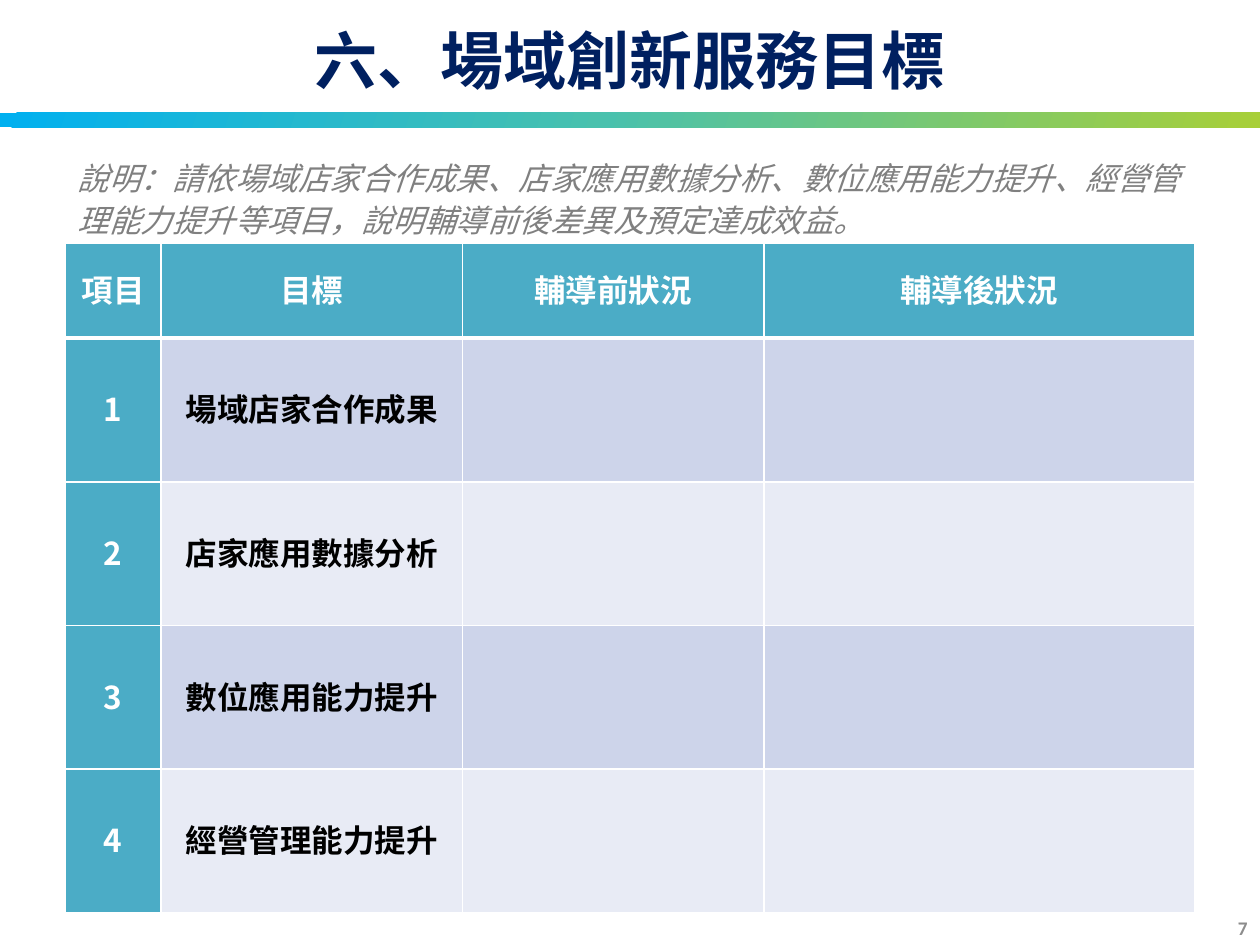
from lxml import etree
from pptx import Presentation
from pptx.dml.color import RGBColor
from pptx.enum.shapes import MSO_SHAPE
from pptx.enum.text import MSO_ANCHOR, PP_ALIGN
from pptx.oxml import parse_xml
from pptx.oxml.ns import nsdecls, qn
from pptx.util import Pt

RECTANGLE = MSO_SHAPE.RECTANGLE
TOP, MIDDLE = MSO_ANCHOR.TOP, MSO_ANCHOR.MIDDLE
LEFT, CENTER, RIGHT = PP_ALIGN.LEFT, PP_ALIGN.CENTER, PP_ALIGN.RIGHT

COLORS = {
    "navy": "002060",
    "gray": "808080",
    "page_number": "8C8C8C",
    "teal": "4BACC6",
    "band_dark": "CDD4EA",
    "band_light": "E8EBF5",
    "white": "FFFFFF",
    "black": "000000",
    "sky": "00B0F0",
    "mint": "49C1AD",
    "lime": "A8CF38",
}
CJK_FONT = "Noto Sans CJK SC"
HEADERS = ["項目", "目標", "輔導前狀況", "輔導後狀況"]
GOALS = ["場域店家合作成果", "店家應用數據分析", "數位應用能力提升", "經營管理能力提升"]


class SlideBuilder:
    def __init__(self, page):
        self.page = page

    def style(self, para, size, color, align, bold=False, italic=False,
              font=CJK_FONT, spacing=None):
        para.alignment = align
        if spacing:
            para.line_spacing = Pt(spacing)
        for span in para.runs:
            span.font.size = Pt(size)
            span.font.bold = bold
            span.font.italic = italic
            span.font.name = font
            span.font.color.rgb = RGBColor.from_string(COLORS[color])
            east_asian = etree.SubElement(span.font._element, qn("a:ea"))
            east_asian.set("typeface", font)

    def text(self, content, left, top, width, height, anchor, **style):
        box = self.page.shapes.add_textbox(Pt(left), Pt(top), Pt(width), Pt(height))
        frame = box.text_frame
        frame.word_wrap = True
        frame.vertical_anchor = anchor
        frame.text = content
        self.style(frame.paragraphs[0], **style)

    def gradient_bar(self, left, top, width, height, stops, angle):
        bar = self.page.shapes.add_shape(
            RECTANGLE, Pt(left), Pt(top), Pt(width), Pt(height))
        bar.shadow.inherit = False
        bar.line.fill.background()
        bar.fill.gradient()
        gradient = bar._element.spPr.find(qn("a:gradFill"))
        stop_xml = "".join(
            f'<a:gs pos="{position * 1000}"><a:srgbClr val="{COLORS[color]}"/></a:gs>'
            for position, color in stops)
        bar._element.spPr.replace(gradient, parse_xml(
            f'<a:gradFill {nsdecls("a")} rotWithShape="1"><a:gsLst>{stop_xml}</a:gsLst>'
            f'<a:lin ang="{angle * 60000}" scaled="0"/></a:gradFill>'))

    def table(self, left, top, widths, heights):
        frame = self.page.shapes.add_table(
            len(heights), len(widths), Pt(left), Pt(top),
            Pt(sum(widths)), Pt(sum(heights)))
        table = frame.table
        table.first_row = False
        table.horz_banding = False
        for column, width in zip(table.columns, widths):
            column.width = Pt(width)
        for row, height in zip(table.rows, heights):
            row.height = Pt(height)
        return table

    def cell(self, cell, content, fill, color, top_line, bottom_line):
        cell.margin_left = cell.margin_right = Pt(5)
        cell.margin_top = cell.margin_bottom = Pt(0)
        cell.vertical_anchor = MIDDLE
        cell.text = content
        self.style(cell.text_frame.paragraphs[0], size=18, color=color,
                   align=CENTER, bold=True, spacing=24)
        properties = cell._tc.get_or_add_tcPr()
        for side, width in (("L", 1), ("R", 1), ("T", top_line), ("B", bottom_line)):
            properties.append(parse_xml(
                f'<a:ln{side} {nsdecls("a")} w="{Pt(width)}"><a:solidFill>'
                f'<a:srgbClr val="{COLORS["white"]}"/></a:solidFill></a:ln{side}>'))
        cell.fill.solid()
        cell.fill.fore_color.rgb = RGBColor.from_string(COLORS[fill])


def main():
    deck = Presentation()
    deck.slide_width, deck.slide_height = Pt(720), Pt(540)
    builder = SlideBuilder(deck.slides.add_slide(deck.slide_layouts[6]))

    builder.gradient_bar(0, 64.5, 720, 8.2,
                         [(0, "sky"), (48, "mint"), (100, "lime")], 18)
    builder.text("六、場域創新服務目標", 0, 0, 720, 68, MIDDLE,
                 size=36, color="navy", align=CENTER, bold=True)
    builder.text("7", 552, 515.5, 168, 29, MIDDLE, size=11,
                 color="page_number", align=RIGHT, bold=True, font="Calibri")

    goals_table = builder.table(37.5, 139.2, [54.4, 172.4, 172.2, 246],
                                [54] + [82.1] * len(GOALS))
    rows = [HEADERS] + [[str(number), goal, "", ""]
                        for number, goal in enumerate(GOALS, 1)]
    for row_index, row in enumerate(rows):
        band = "band_dark" if row_index % 2 else "band_light"
        for column_index, content in enumerate(row):
            heading = row_index == 0 or column_index == 0
            builder.cell(goals_table.cell(row_index, column_index), content,
                         fill="teal" if heading else band,
                         color="white" if heading else "black",
                         top_line=3 if row_index == 1 else 1,
                         bottom_line=3 if row_index == 0 else 1)

    builder.text("說明：請依場域店家合作成果、店家應用數據分析、數位應用能力提升、"
                 "經營管理能力提升等項目，說明輔導前後差異及預定達成效益。",
                 37.5, 85, 645, 54, TOP, size=18, color="gray",
                 align=LEFT, italic=True, spacing=24)
    deck.save("out.pptx")


if __name__ == "__main__":
    main()
